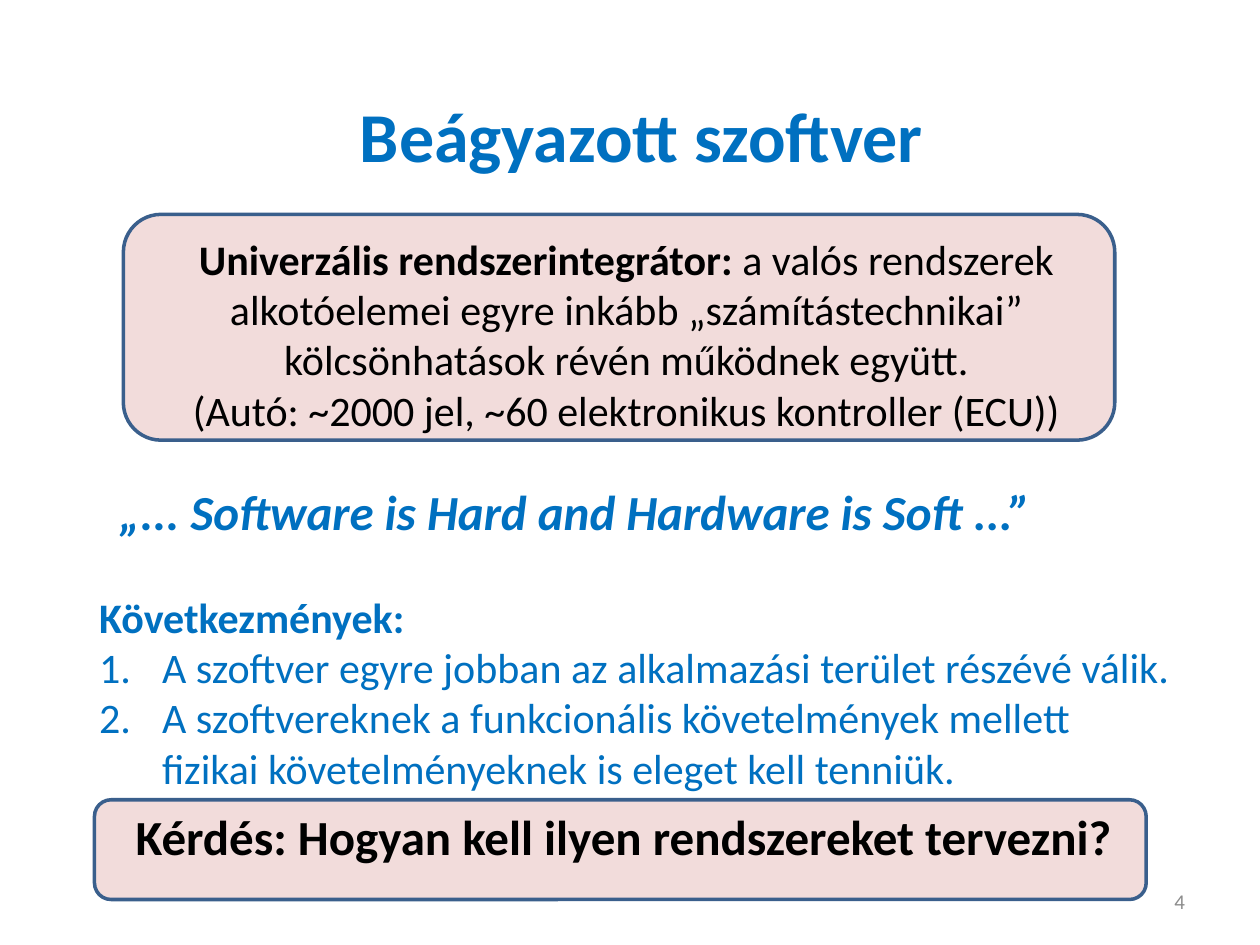
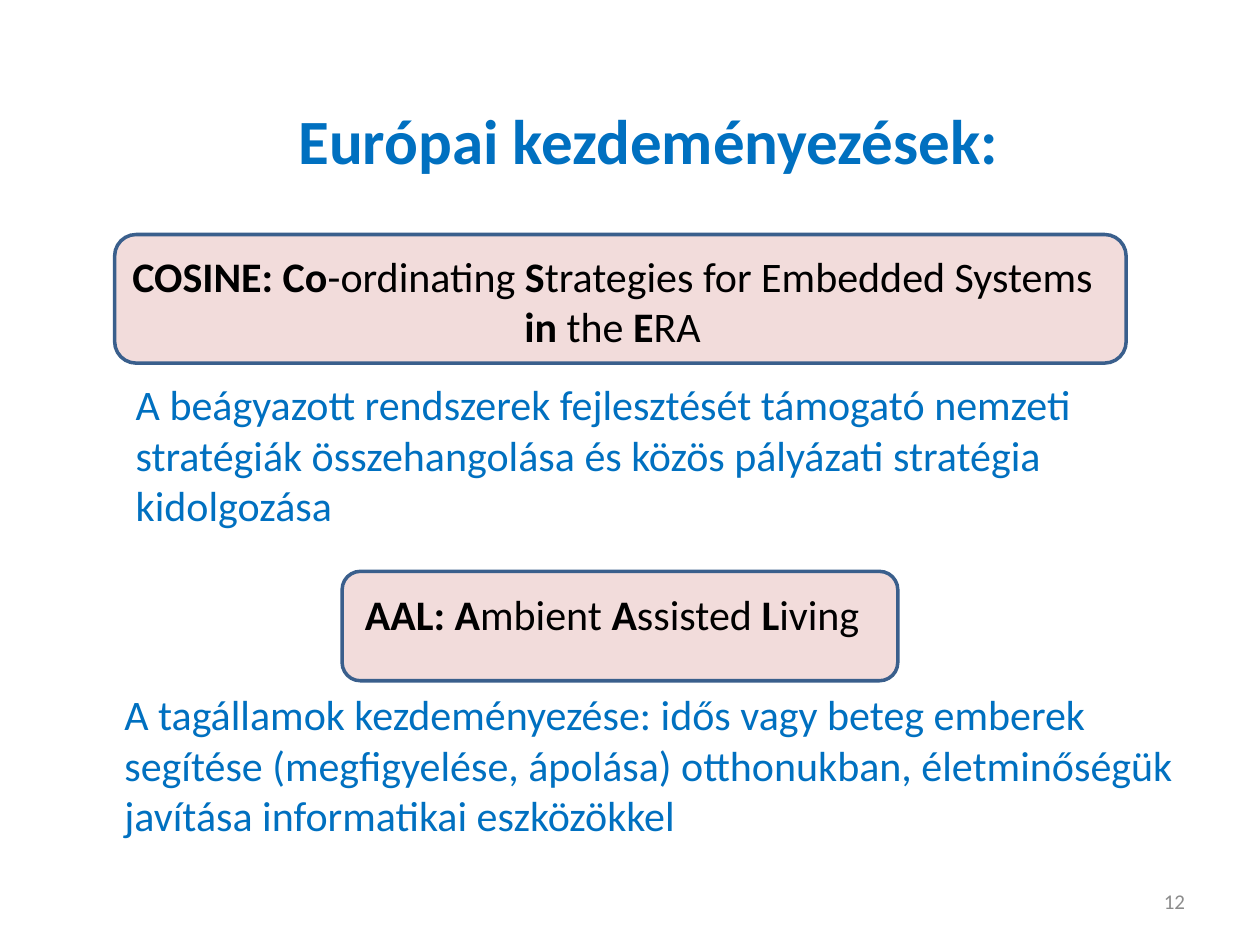
import pptx
import pptx.dml.color
import pptx.enum.shapes
import pptx.enum.text
import pptx.util
from lxml import etree

Pt = pptx.util.Pt
ALIGN = pptx.enum.text.PP_ALIGN
ANCHOR = pptx.enum.text.MSO_ANCHOR
FONT = "Calibri"
BLUE, BLACK, GREY = "0070C0", "000000", "8C8C8C"
PANEL_FILL, PANEL_LINE = "F2DCDB", "3A5F8C"
NUMBER_BOX = (516.25, 500.5, 168, 28.75)
HANGING = 36


def color(value):
    return pptx.dml.color.RGBColor.from_string(value)


def write(frame, text, size=24, ink=BLUE, align=ALIGN.LEFT, anchor=ANCHOR.TOP,
          bold=False, italic=False):
    frame.word_wrap = False
    frame.auto_size = pptx.enum.text.MSO_AUTO_SIZE.NONE
    frame.vertical_anchor = anchor
    for index, line in enumerate(text.split("\n")):
        paragraph = frame.add_paragraph() if index else frame.paragraphs[0]
        paragraph.alignment = align
        for part, words in enumerate(line.split("**")):
            if not words:
                continue
            run = paragraph.add_run()
            run.text = words
            run.font.name, run.font.size = FONT, Pt(size)
            run.font.bold = bold or part % 2 == 1
            run.font.italic = italic
            run.font.color.rgb = color(ink)
    return frame


def add_text(slide, box, text, **style):
    label = slide.shapes.add_textbox(*map(Pt, box))
    return write(label.text_frame, text, **style)


def add_panel(slide, box, text_box, text, **style):
    left, top, width, height = box
    dx, dy, text_width, text_height = text_box
    panel = slide.shapes.add_shape(
        pptx.enum.shapes.MSO_SHAPE.ROUNDED_RECTANGLE, *map(Pt, box))
    panel.shadow.inherit = False
    panel.fill.solid()
    panel.fill.fore_color.rgb = color(PANEL_FILL)
    panel.line.color.rgb = color(PANEL_LINE)
    panel.line.width = Pt(2)
    add_text(slide, (left + dx, top + dy, text_width, text_height), text,
             ink=BLACK, **style)


def indent(paragraph, first_line, numbered=False):
    properties = paragraph._p.get_or_add_pPr()
    properties.set("marL", str(Pt(HANGING)))
    properties.set("indent", str(Pt(first_line)))
    if numbered:
        etree.SubElement(properties, pptx.oxml.ns.qn("a:buAutoNum"),
                         type="arabicPeriod")


def add_consequences(slide, box):
    frame = add_text(slide, box,
                     "**Következmények:**\n"
                     "A szoftver egyre jobban az alkalmazási terület részévé válik.\n"
                     "A szoftvereknek a funkcionális követelmények mellett\n"
                     "fizikai követelményeknek is eleget kell tenniük.",
                     anchor=ANCHOR.BOTTOM)
    heading, first, second, continuation = frame.paragraphs
    indent(heading, -HANGING)
    indent(first, -HANGING, numbered=True)
    indent(second, -HANGING, numbered=True)
    indent(continuation, 0)


def add_titled_slide(deck, title, title_box, title_size, number):
    slide = deck.slides.add_slide(deck.slide_layouts[5])
    heading = slide.shapes.title
    heading.left, heading.top, heading.width, heading.height = map(Pt, title_box)
    write(heading.text_frame, title, size=title_size, align=ALIGN.CENTER, bold=True)
    add_text(slide, NUMBER_BOX, number, size=12, ink=GREY,
             align=ALIGN.RIGHT, anchor=ANCHOR.MIDDLE)
    return slide


def build_software_slide(deck):
    slide = add_titled_slide(deck, "Beágyazott szoftver",
                             (190, 49, 353, 55.5), 40, "4")
    add_panel(slide, (70.5, 122.5, 566.5, 129), (23, 5.5, 529, 124),
              "**Univerzális rendszerintegrátor:** a valós rendszerek\n"
              "alkotóelemei egyre inkább „számítástechnikai”\n"
              "kölcsönhatások révén működnek együtt.\n"
              "(Autó: ~2000 jel, ~60 elektronikus kontroller (ECU))",
              align=ALIGN.CENTER, anchor=ANCHOR.BOTTOM)
    add_text(slide, (61, 271.5, 543, 41),
             "„... Software is Hard and Hardware is Soft ...”",
             size=28, bold=True, italic=True)
    add_consequences(slide, (49.5, 332.5, 633, 124))
    add_panel(slide, (54, 457, 601, 57), (16.5, 0, 579, 41),
              "Kérdés: Hogyan kell ilyen rendszereket tervezni?",
              size=28, bold=True, anchor=ANCHOR.BOTTOM)


def build_initiatives_slide(deck):
    slide = add_titled_slide(deck, "Európai kezdeményezések:",
                             (161.5, 54.5, 418, 51), 36, "12")
    add_panel(slide, (65.5, 134, 578, 73.5), (0, 5.5, 569, 65.5),
              "**COSINE: Co**-ordinating **S**trategies for Embedded Systems\n"
              "**in** the **E**RA", align=ALIGN.CENTER)
    add_text(slide, (70.5, 213, 554.5, 94.5),
             "A beágyazott rendszerek fejlesztését támogató nemzeti\n"
             "stratégiák összehangolása és közös pályázati stratégia\n"
             "kidolgozása")
    add_panel(slide, (195.5, 326.5, 317.5, 62.5), (6, 6, 299.5, 36),
              "**AAL: A**mbient **A**ssisted **L**iving")
    add_text(slide, (64, 390, 620, 94.5),
             "A tagállamok kezdeményezése: idős vagy beteg emberek\n"
             "segítése (megfigyelése, ápolása) otthonukban, életminőségük\n"
             "javítása informatikai eszközökkel")


def main():
    deck = pptx.Presentation()
    deck.slide_width, deck.slide_height = Pt(720), Pt(540)
    build_software_slide(deck)
    build_initiatives_slide(deck)
    deck.save("out.pptx")


if __name__ == "__main__":
    main()
